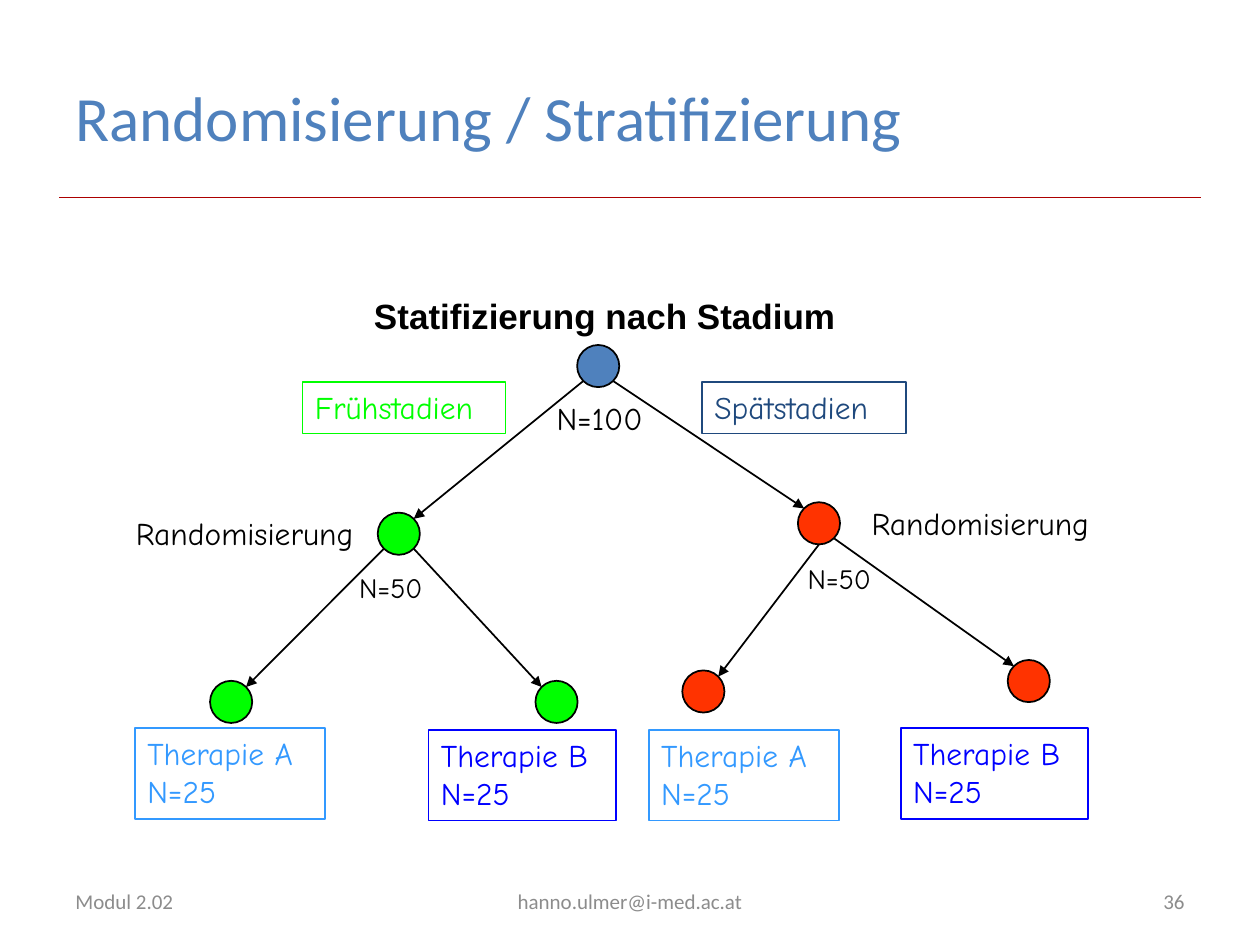
from math import sqrt

from lxml import etree
from pptx import Presentation
from pptx.dml.color import RGBColor
from pptx.enum.shapes import MSO_CONNECTOR, MSO_SHAPE
from pptx.enum.text import MSO_ANCHOR, PP_ALIGN
from pptx.oxml.ns import qn
from pptx.util import Cm, Pt

OVAL, RECT = MSO_SHAPE.OVAL, MSO_SHAPE.RECTANGLE
STRAIGHT = MSO_CONNECTOR.STRAIGHT
TOP, MIDDLE = MSO_ANCHOR.TOP, MSO_ANCHOR.MIDDLE
LEFT, CENTER, RIGHT = PP_ALIGN.LEFT, PP_ALIGN.CENTER, PP_ALIGN.RIGHT

THEME = {
    "black": "000000", "blue": "4F81BD", "green": "00FF00", "red": "FF3300",
    "navy": "1F497D", "sky": "3399FF", "deep": "0000FF", "gray": "8C8C8C",
    "rule": "AC0000",
    "title": 36, "head": 20, "body": 18, "small": 16, "foot": 12,
    "sans": "Calibri", "bold": "Arial", "hand": "Comic Neue",
}

# All places and sizes are in centimetres.
TITLE = "Randomisierung / Stratifizierung"
HEAD = "Statifizierung nach Stadium"
FOOTER = [
    ("Modul 2.02", 1.27, 5.92, LEFT),
    ("hanno.ulmer@i-med.ac.at", 8.68, 8.04, CENTER),
    ("36", 18.21, 5.92, RIGHT),
]
SIZE = 0.85
NODES = {  # name: centre x, centre y, fill
    "root": (12.06, 7.38, "blue"),
    "early": (8.04, 10.76, "green"),
    "late": (16.51, 10.55, "red"),
    "early A": (4.66, 14.15, "green"),
    "early B": (11.22, 14.15, "green"),
    "late A": (14.18, 13.94, "red"),
    "late B": (20.74, 13.73, "red"),
}
ARROWS = [  # parent, child, where the arrow leaves the parent
    ("root", "early", "side"), ("root", "late", "side"),
    ("early", "early A", "side"), ("early", "early B", "side"),
    ("late", "late A", "bottom"), ("late", "late B", "side"),
]
LABELS = [  # text, x, y, width, size
    ("Randomisierung", 2.49, 10.24, 5.08, "body"),
    ("Randomisierung", 17.32, 10.03, 5.08, "body"),
    ("N=100", 10.97, 7.92, 2.41, "body"),
    ("N=50", 6.99, 11.38, 2.31, "small"),
    ("N=50", 16.03, 11.2, 2.29, "small"),
]
ARM_A, ARM_B = "Therapie A\nN=25", "Therapie B\nN=25"
BOXES = [  # text, x, y, width, height, colour
    ("Frühstadien", 6.1, 7.7, 4.09, 1.04, "green"),
    ("Spätstadien", 14.15, 7.7, 4.11, 1.04, "navy"),
    (ARM_A, 2.72, 14.68, 3.84, 1.83, "sky"),
    (ARM_B, 8.64, 14.71, 3.78, 1.83, "deep"),
    (ARM_A, 13.08, 14.71, 3.84, 1.83, "sky"),
    (ARM_B, 18.16, 14.68, 3.78, 1.83, "deep"),
]


def tint(name):
    return RGBColor.from_string(THEME[name])


def write(slide, text, x, y, w, h, font="hand", size="body", color="black",
          bold=False, align=LEFT, anchor=TOP, frame=False):
    """Place text, one paragraph a line; a frame takes the text colour."""
    place = Cm(x), Cm(y), Cm(w), Cm(h)
    if frame:
        box = slide.shapes.add_shape(RECT, *place)
        box.shadow.inherit = False
        box.fill.background()
        box.line.color.rgb = tint(color)
        box.line.width = Pt(1)
    else:
        box = slide.shapes.add_textbox(*place)
    body = box.text_frame
    body.word_wrap = True
    body.vertical_anchor = anchor
    body.text = text
    for para in body.paragraphs:
        para.alignment = align
        para.font.name = THEME[font]
        para.font.size = Pt(THEME[size])
        para.font.bold = bold
        para.font.color.rgb = tint(color)


def draw_line(slide, start, end, color="black", width=1, head=False):
    line = slide.shapes.add_connector(STRAIGHT, *map(Cm, start + end))
    line.line.color.rgb = tint(color)
    line.line.width = Pt(width)
    props = line._element.spPr
    if head:
        tip = etree.SubElement(props.find(qn("a:ln")), qn("a:tailEnd"))
        tip.set("type", "triangle")
    etree.SubElement(props, qn("a:effectLst"))


def draw_node(slide, x, y, color):
    node = slide.shapes.add_shape(
        OVAL, Cm(x - SIZE / 2), Cm(y - SIZE / 2), Cm(SIZE), Cm(SIZE))
    node.shadow.inherit = False
    node.fill.solid()
    node.fill.fore_color.rgb = tint(color)
    node.line.color.rgb = tint("black")
    node.line.width = Pt(1)


def draw_arrow(slide, parent, child, exit_at):
    """Run between the facing diagonal points of two nodes."""
    (px, py, _), (cx, cy, _) = NODES[parent], NODES[child]
    diag = SIZE / 2 / sqrt(2)
    step = diag if cx > px else -diag
    if exit_at == "bottom":
        start = (px, py + SIZE / 2)
    else:
        start = (px + step, py + diag)
    draw_line(slide, start, (cx - step, cy - diag), head=True)


def main():
    deck = Presentation()
    deck.slide_width, deck.slide_height = Cm(25.4), Cm(19.05)
    slide = deck.slides.add_slide(deck.slide_layouts[6])

    draw_line(slide, (1.19, 3.97), (24.21, 3.97), color="rule", width=0.25)
    write(slide, TITLE, 1.27, 0.76, 17.2, 3.18, font="sans", size="title",
          color="blue", anchor=MIDDLE)
    for text, x, w, align in FOOTER:
        write(slide, text, x, 17.65, w, 1.02, font="sans", size="foot",
              color="gray", align=align, anchor=MIDDLE)

    for node in NODES.values():
        draw_node(slide, *node)
    for arrow in ARROWS:
        draw_arrow(slide, *arrow)

    write(slide, HEAD, 7.29, 5.82, 10.36, 1.09, font="bold", size="head",
          bold=True)
    for text, x, y, w, size in LABELS:
        write(slide, text, x, y, w, 1.02, size=size)
    for text, x, y, w, h, color in BOXES:
        write(slide, text, x, y, w, h, color=color, frame=True)

    deck.save("out.pptx")


if __name__ == "__main__":
    main()
